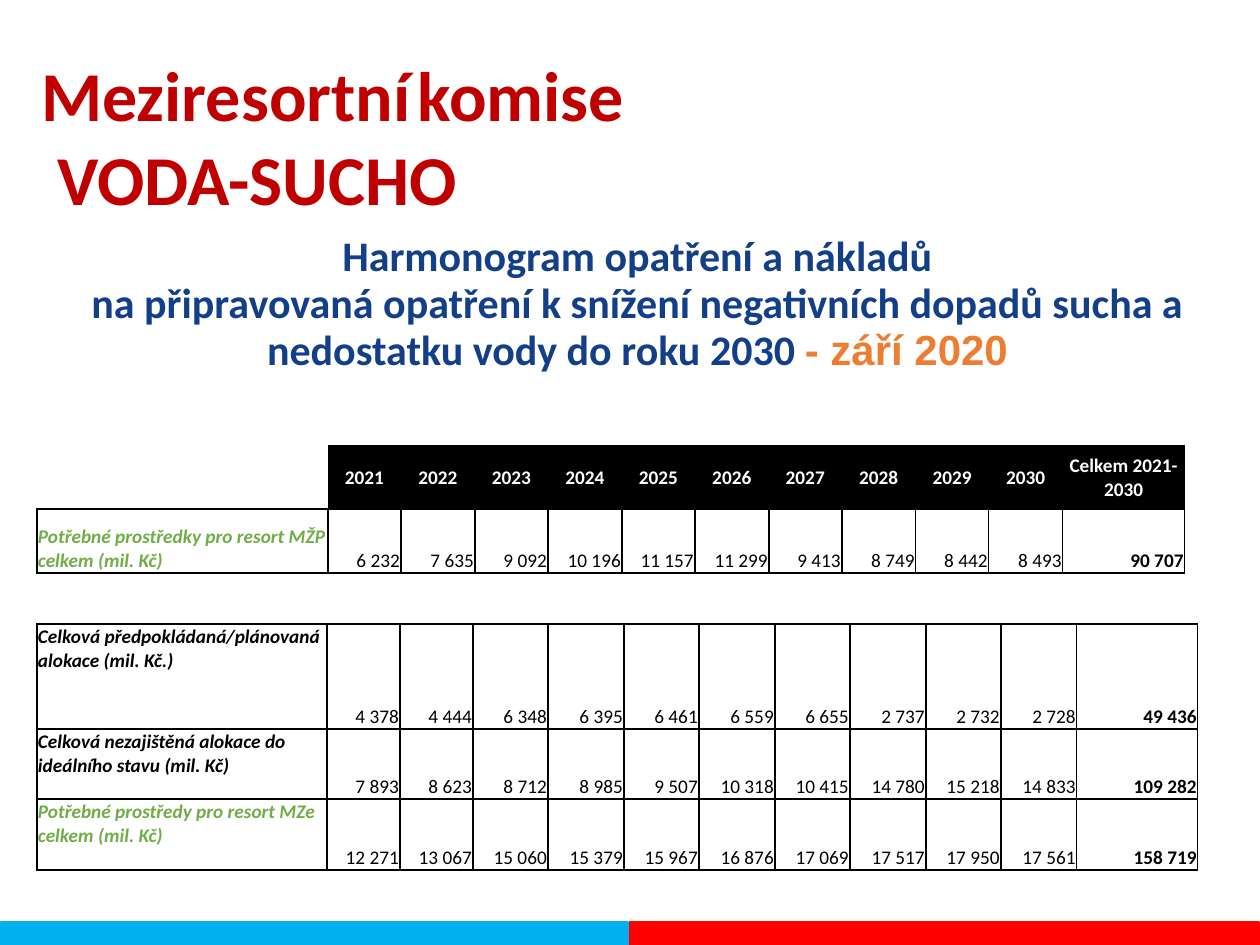
"""Build the water and drought commission slide with its two cost tables."""
from lxml.etree import SubElement
from pptx import Presentation
from pptx.dml.color import RGBColor
from pptx.enum.shapes import MSO_SHAPE
from pptx.enum.text import MSO_ANCHOR, PP_ALIGN
from pptx.oxml.ns import qn
from pptx.util import Emu, Pt

THEME = {
    "red": "C00000", "navy": "123F88", "orange": "ED7D31", "green": "70AD47",
    "black": "000000", "white": "FFFFFF", "sky": "00B0F0", "flag": "FF0000",
    "title": 40, "gap": 18, "sub": 24, "cell": 11,
    "main": "Calibri", "alt": "Arial",
}
PLAIN = "{2D5ABB26-0587-4C30-8999-92F81FD0307C}"


def px(num):
    return Emu(round(num * 914400 / 126))


def write(para, text, size, color, font="main", bold=True, italic=False):
    run = para.add_run()
    run.text = text
    style = {"name": THEME[font], "size": Pt(THEME[size]), "bold": bold, "italic": italic}
    for key, value in style.items():
        setattr(run.font, key, value)
    run.font.color.rgb = RGBColor.from_string(THEME[color])


deck = Presentation()
deck.slide_width, deck.slide_height = px(1260), px(945)
slide = deck.slides.add_slide(deck.slide_layouts[6])

for left, width, color in ((1, 627, "sky"), (630, 629, "flag")):
    bar = slide.shapes.add_shape(MSO_SHAPE.RECTANGLE, px(left), px(922), px(width), px(23))
    bar.shadow.inherit = False
    bar.fill.solid()
    bar.fill.fore_color.rgb = bar.line.color.rgb = RGBColor.from_string(THEME[color])
    bar.line.width = Pt(1)

title = slide.shapes.add_textbox(px(29), px(45), px(942), px(183)).text_frame
title.word_wrap = True
first, second = title.paragraphs[0], title.add_paragraph()
write(first, "Meziresortní", "title", "red")
write(first, " ", "gap", "red", bold=False)
write(first, "komise", "title", "red")
second._p.get_or_add_pPr().set("marL", str(px(16)))
write(second, "VODA-SUCHO", "title", "red")

years = [str(year) for year in range(2021, 2031)]
tables = [
    {
        "top": 445,
        "cols": [291] + [73, 74] * 5 + [122],
        "rows": [64, 64, 31],
        "cells": [
            ["", *years, "Celkem 2021-2030"],
            ["Potřebné prostředky pro resort MŽP celkem (mil. Kč)",
             "6 232", "7 635", "9 092", "10 196", "11 157", "11 299",
             "9 413", "8 749", "8 442", "8 493", "90 707"],
            [""] * 12,
        ],
        "kinds": ["head", "need", "blank"],
        "label": MSO_ANCHOR.BOTTOM,
    },
    {
        "top": 624,
        "cols": [290, 73, 73] + [75, 76] * 4 + [121],
        "rows": [105, 70, 71],
        "cells": [
            ["Celková předpokládaná/plánovaná alokace (mil. Kč.)",
             "4 378", "4 444", "6 348", "6 395", "6 461", "6 559",
             "6 655", "2 737", "2 732", "2 728", "49 436"],
            ["Celková nezajištěná alokace do ideálního stavu (mil. Kč)",
             "7 893", "8 623", "8 712", "8 985", "9 507", "10 318",
             "10 415", "14 780", "15 218", "14 833", "109 282"],
            ["Potřebné prostředy pro resort MZe celkem (mil. Kč)",
             "12 271", "13 067", "15 060", "15 379", "15 967", "16 876",
             "17 069", "17 517", "17 950", "17 561", "158 719"],
        ],
        "kinds": ["plan", "plan", "need"],
        "label": MSO_ANCHOR.TOP,
    },
]
sides = {"head": "B", "need": "LRTB", "plan": "LRTB", "blank": "T"}
inks = {"head": "white", "need": "green", "plan": "black"}

for data in tables:
    cols, rows = data["cols"], data["rows"]
    frame = slide.shapes.add_table(
        len(rows), len(cols), px(37), px(data["top"]), px(sum(cols)), px(sum(rows)))
    grid = frame.table
    grid.first_row = grid.horz_banding = False
    grid._tbl.tblPr.find(qn("a:tableStyleId")).text = PLAIN
    for col, width in zip(grid.columns, cols):
        col.width = px(width)
    for row, height, texts, kind in zip(grid.rows, rows, data["cells"], data["kinds"]):
        row.height = px(height)
        for spot, (cell, text) in enumerate(zip(row.cells, texts)):
            label, head = spot == 0, kind == "head"
            anchor = data["label"] if label else MSO_ANCHOR.BOTTOM
            form = {
                "margin_left": px(1), "margin_right": px(1),
                "margin_top": px(1), "margin_bottom": 0,
                "vertical_anchor": MSO_ANCHOR.MIDDLE if head else anchor,
            }
            for key, value in form.items():
                setattr(cell, key, value)
            for side in sides[kind]:
                edge = SubElement(cell._tc.get_or_add_tcPr(), qn("a:ln" + side), w=str(Pt(1)))
                paint = SubElement(edge, qn("a:solidFill"))
                SubElement(paint, qn("a:srgbClr"), val=THEME["black"])
            if head and text:
                cell.fill.solid()
                cell.fill.fore_color.rgb = RGBColor.from_string(THEME["black"])
            else:
                cell.fill.background()
            para = cell.text_frame.paragraphs[0]
            if not text:
                SubElement(para._p, qn("a:endParaRPr"), sz=str(THEME["cell"] * 100))
                continue
            if not label:
                para.alignment = PP_ALIGN.CENTER if head else PP_ALIGN.RIGHT
            write(para, text, "cell", inks[kind] if label or head else "black",
                  bold=label or head or spot == len(cols) - 1, italic=label)

sub = slide.shapes.add_textbox(px(15), px(228), px(1245), px(160)).text_frame
sub.word_wrap = True
sub.margin_left = sub.margin_right = sub.margin_bottom = 0
first, second = sub.paragraphs[0], sub.add_paragraph()
for para in (first, second):
    para.alignment = PP_ALIGN.CENTER
    para.line_spacing = 0.93
write(first, "Harmonogram opatření a nákladů", "sub", "navy")
write(second, "na připravovaná opatření k snížení negativních dopadů sucha a "
      "nedostatku vody do roku 2030 ", "sub", "navy")
write(second, "- září 2020", "sub", "orange", "alt")

deck.save("out.pptx")
